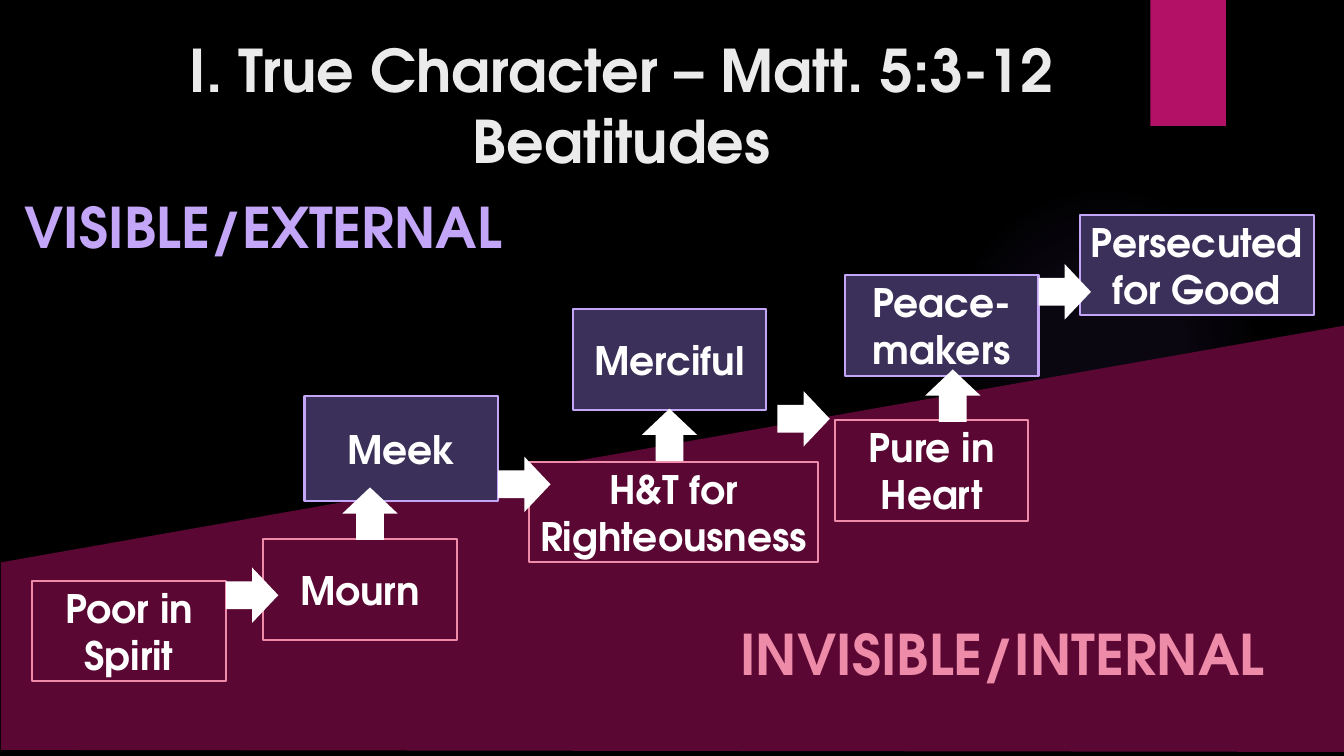
from lxml import etree
from pptx import Presentation
from pptx.dml.color import RGBColor
from pptx.enum.shapes import MSO_SHAPE as Preset
from pptx.enum.text import MSO_ANCHOR as Anchor, PP_ALIGN as Align
from pptx.oxml import parse_xml
from pptx.util import Pt

PX = 9144
FONT = "TeX Gyre Adventor"
NAMESPACE = 'xmlns:a="http://schemas.openxmlformats.org/drawingml/2006/main"'
WHITE, LILAC, PINK = "FFFFFF", "C3A6F7", "EE8BA9"
INDIGO, WINE = "3B3059", "5A0833"


def color(value):
    return RGBColor.from_string(value)


def write(shape, text, size=28, ink=WHITE, align=Align.CENTER, anchor=Anchor.MIDDLE):
    frame = shape.text_frame
    frame.word_wrap = True
    frame.vertical_anchor = anchor
    frame.text = text
    for paragraph in frame.paragraphs:
        paragraph.alignment = align
        for run in paragraph.runs:
            run.font.name = FONT
            run.font.size = Pt(size)
            run.font.bold = True
            run.font.color.rgb = color(ink)


presentation = Presentation()
presentation.slide_width = 1333 * PX
presentation.slide_height = 750 * PX
slide = presentation.slides.add_slide(presentation.slide_layouts[6])
slide.background.fill.solid()
slide.background.fill.fore_color.rgb = color("000000")
shapes = slide.shapes

glow = shapes.add_shape(Preset.OVAL, 941 * PX, 183 * PX, 308 * PX, 308 * PX)
glow.shadow.inherit = False
glow.line.fill.background()
stops = "".join(
    f'<a:gs pos="{position}000"><a:srgbClr val="9B6BF2"><a:alpha val="{alpha}000"/></a:srgbClr></a:gs>'
    for position, alpha in [(0, 7), (36, 6), (69, 0)]
)
gradient = parse_xml(
    f'<a:gradFill {NAMESPACE}><a:gsLst>{stops}</a:gsLst><a:path path="circle">'
    '<a:fillToRect l="50000" t="50000" r="50000" b="50000"/></a:path></a:gradFill>'
)
glow.element.spPr.find("{*}prstGeom").addnext(gradient)

ribbon = shapes.add_shape(Preset.RECTANGLE, 1141 * PX, 0, 75 * PX, 125 * PX)
ribbon.shadow.inherit = False
ribbon.fill.solid()
ribbon.fill.fore_color.rgb = color("B31166")
ribbon.line.fill.background()
shadow = etree.fromstring(
    f'<a:outerShdw {NAMESPACE} blurRad="38100" dist="25400" dir="5400000" rotWithShape="0">'
    '<a:srgbClr val="000000"><a:alpha val="45000"/></a:srgbClr></a:outerShdw>'
)
ribbon.element.spPr.find("{*}effectLst").append(shadow)

builder = shapes.build_freeform(1334, 746, scale=PX)
builder.add_line_segments([(1, 744), (1, 558), (1334, 323)], close=True)
slope = builder.convert_to_shape()
slope.shadow.inherit = False
slope.fill.solid()
slope.fill.fore_color.rgb = color(WINE)
slope.line.fill.background()

title = shapes.add_textbox(102 * PX, 27 * PX, 1029 * PX, 153 * PX)
write(title, "I. True Character – Matt. 5:3-12\vBeatitudes", size=42, ink="EBEBEB")
invisible = shapes.add_textbox(704 * PX, 610 * PX, 560 * PX, 83 * PX)
write(invisible, "INVISIBLE/INTERNAL", size=40, ink=PINK, align=Align.RIGHT, anchor=Anchor.TOP)
visible = shapes.add_textbox(8 * PX, 186 * PX, 506 * PX, 79 * PX)
write(visible, "VISIBLE/EXTERNAL", size=40, ink=LILAC, anchor=Anchor.TOP)

internal, external = (WINE, PINK), (INDIGO, LILAC)
beatitudes = [
    ("Poor in Spirit", 32, 576, 192, 100, internal),
    ("Mourn", 261, 535, 192, 100, internal),
    ("Meek", 302, 393, 192, 104, external),
    ("H&T for\nRighteousness", 525, 458, 286, 100, internal),
    ("Merciful", 568, 307, 192, 100, external),
    ("Pure in\nHeart", 828, 417, 192, 100, internal),
    ("Peace-makers", 838, 273, 192, 100, external),
    ("Persecuted for Good", 1071, 213, 232, 100, external),
]
for text, left, top, width, height, (fill, outline) in beatitudes:
    box = shapes.add_shape(Preset.RECTANGLE, left * PX, top * PX, width * PX, height * PX)
    box.shadow.inherit = False
    box.fill.solid()
    box.fill.fore_color.rgb = color(fill)
    box.line.color.rgb = color(outline)
    box.line.width = Pt(1.5)
    write(box, text)

arrows = [
    (224, 563, 0), (341, 482, 270), (494, 453, 0), (638, 404, 270),
    (771, 388, 0), (919, 365, 270), (1030, 262, 0),
]
for left, top, rotation in arrows:
    arrow = shapes.add_shape(Preset.RIGHT_ARROW, left * PX, top * PX, 52 * PX, 55 * PX)
    arrow.rotation = rotation
    arrow.shadow.inherit = False
    arrow.fill.solid()
    arrow.fill.fore_color.rgb = color(WHITE)
    arrow.line.fill.background()

presentation.save("out.pptx")
